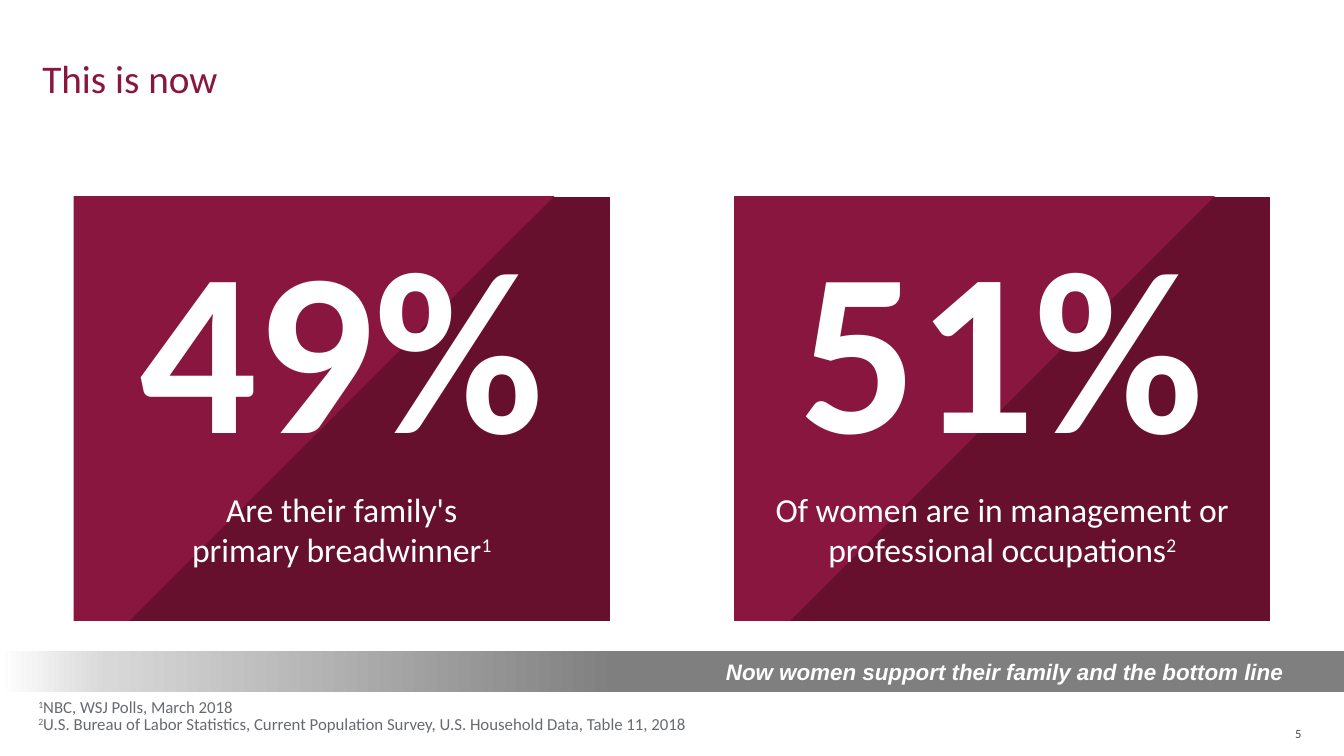
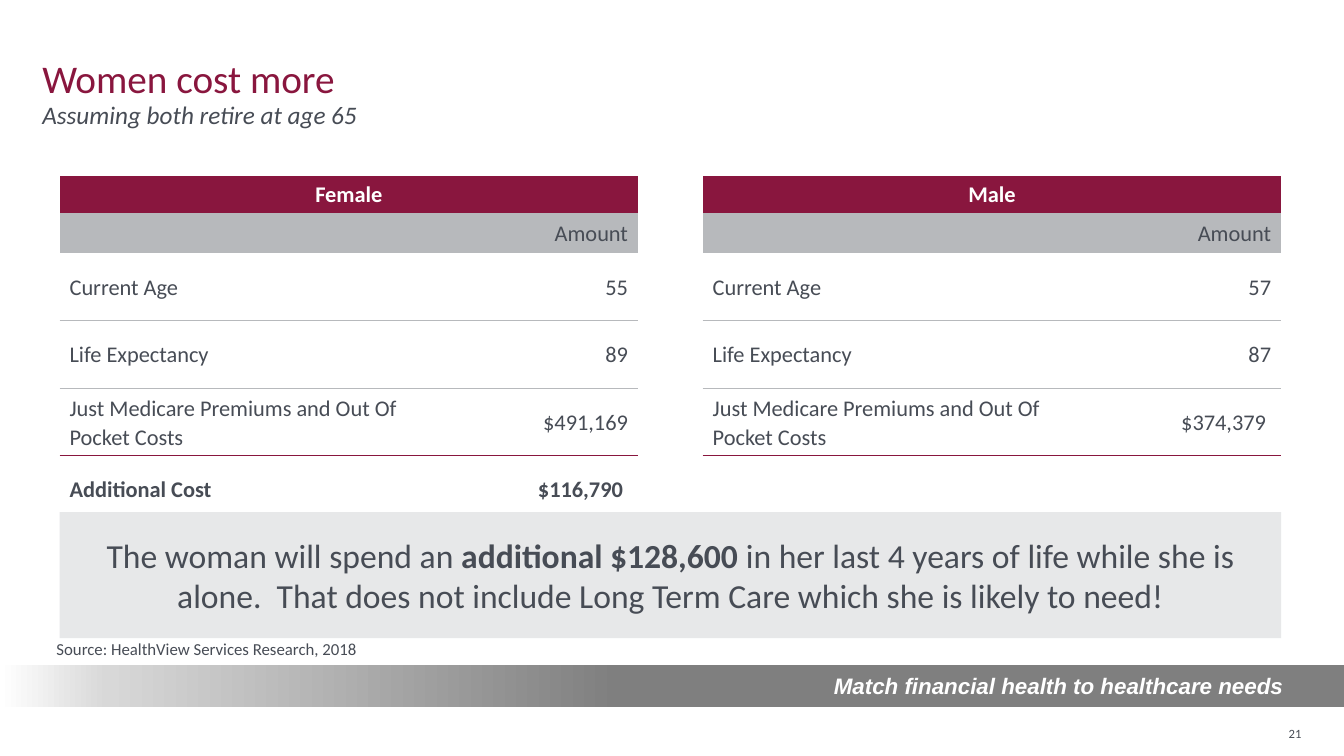
from lxml import etree
from pptx import Presentation
from pptx.dml.color import RGBColor
from pptx.enum.shapes import MSO_SHAPE as SHAPE
from pptx.enum.text import MSO_ANCHOR as ANCHOR, PP_ALIGN as ALIGN
from pptx.oxml.ns import qn
from pptx.util import Inches, Pt

SLIDE_W, SLIDE_H = Inches(13.33), Inches(7.5)
WINE, DARK_WINE, WHITE = "89163E", "67102E", "FFFFFF"
INK, NOTE_GRAY, RULE_GRAY, PALE = "474C55", "676A6F", "B7B9BC", "E7E8E9"
CARD_STOPS = [(0, DARK_WINE), (50, DARK_WINE), (50, WINE), (100, WINE)]
BAND_STOPS = [(54, "7F7F7F"), (92, "D8D8D8"), (100, WHITE)]
NO_STYLE = "{2D5ABB26-0587-4C30-8999-92F81FD0307C}"
EDGE = 4.43
CONTENT_W = 100 - 2 * EDGE - 0.24
SUP = {"sup": True}


def rgb(value):
    """Turn a hex string into a colour."""
    return RGBColor.from_string(value)


def across(share):
    """Length as a percentage of the slide width."""
    return round(SLIDE_W * share / 100)


def down(share):
    """Length as a percentage of the slide height."""
    return round(SLIDE_H * share / 100)


def place(x, y, w, h):
    """Left, top, width and height from percentages of the slide."""
    return across(x), down(y), across(w), down(h)


def add_run(p, text, size, color, font="Calibri", bold=False, italic=False, sup=False):
    """Add one formatted run."""
    r = p.add_run()
    r.text = text
    f = r.font
    f.size, f.name, f.bold, f.italic = Pt(size), font, bold, italic
    f.color.rgb = rgb(color)
    if sup:
        r._r.get_or_add_rPr().set("baseline", "30000")


def write(p, runs, size, color, align=ALIGN.LEFT, line=None, after=None, **style):
    """Fill a paragraph from (text, overrides) runs, where a newline breaks the line."""
    p.alignment = align
    if line:
        p.line_spacing = line
    if after:
        p.space_after = Pt(after)
    for text, extra in [(runs, {})] if isinstance(runs, str) else runs:
        for i, part in enumerate(text.split("\n")):
            if i:
                p.add_line_break()
            if part:
                add_run(p, part, size, color, **{**style, **extra})


def frame(sp, anchor, insets):
    """Set wrapping, anchor and insets in inches, and return the text frame."""
    tf = sp.text_frame
    tf.word_wrap = True
    tf.vertical_anchor = anchor
    tf.margin_left, tf.margin_top, tf.margin_right, tf.margin_bottom = map(Inches, insets)
    return tf


def add_text(s, box, runs, size, color, anchor=ANCHOR.TOP, insets=(0, 0, 0, 0), **style):
    """Add a text box holding one paragraph."""
    tf = frame(s.shapes.add_textbox(*place(*box)), anchor, insets)
    write(tf.paragraphs[0], runs, size, color, **style)


def add_rect(s, box):
    """Add a rectangle without line or shadow."""
    sp = s.shapes.add_shape(SHAPE.RECTANGLE, *place(*box))
    sp.shadow.inherit = False
    sp.line.fill.background()
    return sp


def fill_gradient(sp, stops, angle):
    """Give a shape a linear gradient with any number of stops."""
    sp.fill.gradient()
    grad = sp._element.spPr.find(qn("a:gradFill"))
    for child in list(grad):
        grad.remove(child)
    gs_list = etree.SubElement(grad, qn("a:gsLst"))
    for pos, color in stops:
        gs = etree.SubElement(gs_list, qn("a:gs"), pos=str(pos * 1000))
        etree.SubElement(gs, qn("a:srgbClr"), val=color)
    etree.SubElement(grad, qn("a:lin"), ang=str(angle * 60000), scaled="0")


def add_base(prs, title, number, band_text, band_top):
    """Add a slide with its title, page number and closing band."""
    s = prs.slides.add_slide(prs.slide_layouts[6])
    add_text(s, (2.85, 0, 82.88, 13.47), title, 28, WINE, ANCHOR.BOTTOM,
             (0.04, 0, 0.04, 0), line=0.9)
    add_text(s, (93.75, 96.13, 3.08, 1.87), number, 9, INK, ANCHOR.MIDDLE, align=ALIGN.RIGHT)
    band = add_rect(s, (0, band_top, 100, 5.47))
    fill_gradient(band, BAND_STOPS, 180)
    tf = frame(band, ANCHOR.MIDDLE, (0.1, 0.05, 0.6, 0.05))
    write(tf.paragraphs[0], band_text, 16, WHITE, ALIGN.RIGHT,
          font="Arial", bold=True, italic=True)
    return s


def add_card(s, x, w, figure, label):
    """Add a two-tone card with a big figure above its label."""
    sp = add_rect(s, (x, 26, w, 56.13))
    fill_gradient(sp, CARD_STOPS, 225)
    tf = frame(sp, ANCHOR.TOP, (0, 0.05, 0, 0.05))
    write(tf.paragraphs[0], figure, 166, WHITE, ALIGN.CENTER, after=6, bold=True)
    write(tf.add_paragraph(), label, 24, WHITE, ALIGN.CENTER, after=6)


def set_border(cell, side, color, width):
    """Draw one border of a cell; side is T or B."""
    pr = cell._tc.get_or_add_tcPr()
    ln = etree.Element(qn(f"a:ln{side}"), w=str(Pt(width)))
    fill = etree.SubElement(ln, qn("a:solidFill"))
    etree.SubElement(fill, qn("a:srgbClr"), val=color)
    pr.insert(len(pr.findall(qn("a:lnT"))), ln)


def fill_cell(cell, text, color=INK, fill=None, **style):
    """Set a cell's fill and its text."""
    cell.vertical_anchor = ANCHOR.MIDDLE
    if fill:
        cell.fill.solid()
        cell.fill.fore_color.rgb = rgb(fill)
    else:
        cell.fill.background()
    write(cell.text_frame.paragraphs[0], text, 16, color, **style)


def add_cost_table(s, x, w, heading, rows):
    """Add a table with a heading, an amount row and ruled rows of costs."""
    heights = [4.87, 5.2] + [8.9] * len(rows)
    tbl = s.shapes.add_table(len(heights), 2, *place(x, 23.28, w, sum(heights))).table
    tbl.first_row = tbl.horz_banding = False
    tbl._tbl.tblPr.find(qn("a:tableStyleId")).text = NO_STYLE
    for col, share in zip(tbl.columns, (0.71, 0.29)):
        col.width = across(w * share)
    for row, height in zip(tbl.rows, heights):
        row.height = down(height)
    tbl.cell(0, 0).merge(tbl.cell(0, 1))
    fill_cell(tbl.cell(0, 0), heading, WHITE, WINE, align=ALIGN.CENTER, bold=True)
    body = [("", "Amount")] + rows
    for i, texts in enumerate(body, 1):
        for j, text in enumerate(texts):
            cell = tbl.cell(i, j)
            fill_cell(cell, text, fill=RULE_GRAY if i == 1 else None, line=1.07,
                      align=ALIGN.RIGHT if j else ALIGN.LEFT, bold=i == 5)
            if i > 2:
                set_border(cell, "T", *((WINE, 1.5) if i == 5 else (RULE_GRAY, 0.25)))
            if 1 < i < 5:
                set_border(cell, "B", *((WINE, 1.5) if i == 4 else (RULE_GRAY, 0.25)))


def build_now(prs):
    """Build the slide with two headline figures."""
    s = add_base(prs, "This is now", "5",
                 "Now women support their family and the bottom line", 86.13)
    margin, w = 5.48, 39.9
    add_card(s, margin, w, "49%", [("Are their family's\nprimary breadwinner", {}), ("1", SUP)])
    add_card(s, 100 - margin - w, w, "51%",
             [("Of women are in management or professional occupations", {}), ("2", SUP)])
    notes = [("1", SUP), ("NBC, WSJ Polls, March 2018\n", {}), ("2", SUP),
             ("U.S. Bureau of Labor Statistics, Current Population Survey, "
              "U.S. Household Data, Table 11, 2018", {})]
    add_text(s, (2.85, 91.73, 93.6, 5.33), notes, 12, NOTE_GRAY, ANCHOR.BOTTOM,
             (0, 0.05, 0, 0), line=0.85)


def build_cost(prs):
    """Build the slide comparing costs by gender."""
    s = add_base(prs, "Women cost more", "21",
                 "Match financial health to healthcare needs", 88)
    add_text(s, (2.85, 13.6, 82.88, 3.6), "Assuming both retire at age 65", 18, INK,
             insets=(0.04, 0, 0.04, 0), line=0.9, italic=True)
    add_text(s, (4.2, 83.87, 93.6, 3.33), "Source: HealthView Services Research, 2018",
             12, INK, ANCHOR.BOTTOM, (0, 0.05, 0, 0))
    labels = ["Current Age", "Life Expectancy",
              "Just Medicare Premiums and Out Of Pocket Costs", "Additional Cost"]
    w = 43.05
    add_cost_table(s, EDGE, w, "Female",
                   list(zip(labels, ["55", "89", "$491,169", "$116,790 "])))
    add_cost_table(s, EDGE + CONTENT_W - w, w, "Male",
                   list(zip(labels, ["57", "87", "$374,379 "])))
    sp = add_rect(s, (EDGE, 67.73, CONTENT_W, 16.67))
    sp.fill.solid()
    sp.fill.fore_color.rgb = rgb(PALE)
    tf = frame(sp, ANCHOR.MIDDLE, (0.1, 0.05, 0.1, 0.05))
    write(tf.paragraphs[0],
          [("The woman will spend an ", {}), ("additional $128,600 ", {"bold": True}),
           ("in her last 4 years of life while she is alone.  That does not include "
            "Long Term Care which she is likely to need!", {})],
          24, INK, ALIGN.CENTER)


def main():
    """Build and save the deck."""
    prs = Presentation()
    prs.slide_width, prs.slide_height = SLIDE_W, SLIDE_H
    build_now(prs)
    build_cost(prs)
    prs.save("out.pptx")


if __name__ == "__main__":
    main()
